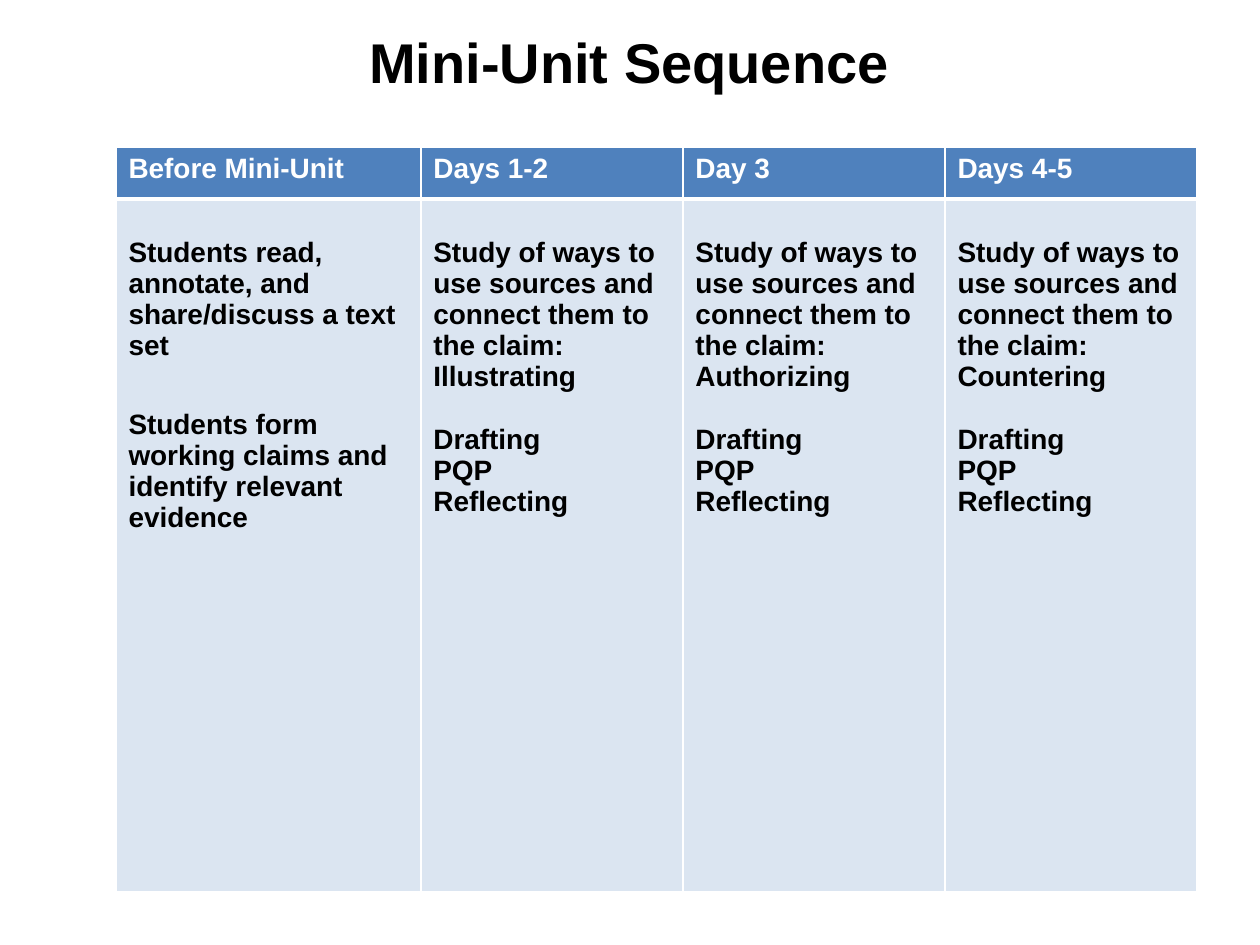
from lxml.etree import fromstring
from pptx import Presentation
from pptx.dml.color import RGBColor as RGB
from pptx.enum.text import MSO_ANCHOR as Anchor, PP_ALIGN as Align
from pptx.util import Inches, Pt

NS = "http://schemas.openxmlformats.org/drawingml/2006/main"


def write(frame, *paras, size=16, color="000000"):
    """Fill a frame with (text, space before) pairs."""
    frame.word_wrap = True
    for i, (text, gap) in enumerate(paras):
        para = frame.paragraphs[0] if i == 0 else frame.add_paragraph()
        para.alignment = Align.LEFT
        para.space_before = Pt(gap)
        run = para.add_run()
        run.text = text
        run.font.name = "Arial"
        run.font.size = Pt(size)
        run.font.bold = True
        run.font.color.rgb = RGB.from_string(color)


def paint(cell, fill, **widths):
    """Fill a cell and draw its white borders, with widths in points."""
    cell.fill.solid()
    cell.fill.fore_color.rgb = RGB.from_string(fill)
    props = cell._tc.get_or_add_tcPr()
    for i, side in enumerate("LRTB"):
        width = Pt(widths.get(side, 1))
        props.insert(i, fromstring(
            f'<a:ln{side} xmlns:a="{NS}" w="{width}"><a:solidFill>'
            f'<a:srgbClr val="FFFFFF"/></a:solidFill></a:ln{side}>'))


deck = Presentation()
deck.slide_width, deck.slide_height = Inches(10), Inches(7.5)
slide = deck.slides.add_slide(deck.slide_layouts[5])

# Title
title = slide.shapes.title
title.left, title.top = Inches(2.83), Inches(0.17)
title.width, title.height = Inches(6.25), Inches(0.64)
title.text_frame.vertical_anchor = Anchor.TOP
write(title.text_frame, ("Mini-Unit Sequence", 0), size=32)

# Text of each column
plan = [("Before Mini-Unit", [
    ("Students read, annotate, and share/discuss a text set", 0),
    ("Students form working claims and identify relevant evidence", 27.5)])]
for days, way in [("Days 1-2", "Illustrating"), ("Day 3", "Authorizing"),
                  ("Days 4-5", "Countering")]:
    plan.append((days, [
        (f"Study of ways to use sources and connect them to the claim: {way}", 0),
        ("Drafting", 18), ("PQP", 0), ("Reflecting", 0)]))

# Table
table = slide.shapes.add_table(2, len(plan), Inches(0.92), Inches(1.17),
                               Inches(8.58), Inches(5.91)).table
for row, height in zip(table.rows, (0.41, 5.5)):
    row.height = Inches(height)
for col, width in zip(table.columns, (2.42, 2.08, 2.08, 2)):
    col.width = Inches(width)
for c, (head, body) in enumerate(plan):
    top, main = table.cell(0, c), table.cell(1, c)
    write(top.text_frame, (head, 0), color="FFFFFF")
    paint(top, "4F81BD", B=3)
    write(main.text_frame, *body)
    paint(main, "DBE5F1", T=3)
    main.margin_top = Inches(0.3)

deck.save("out.pptx")
